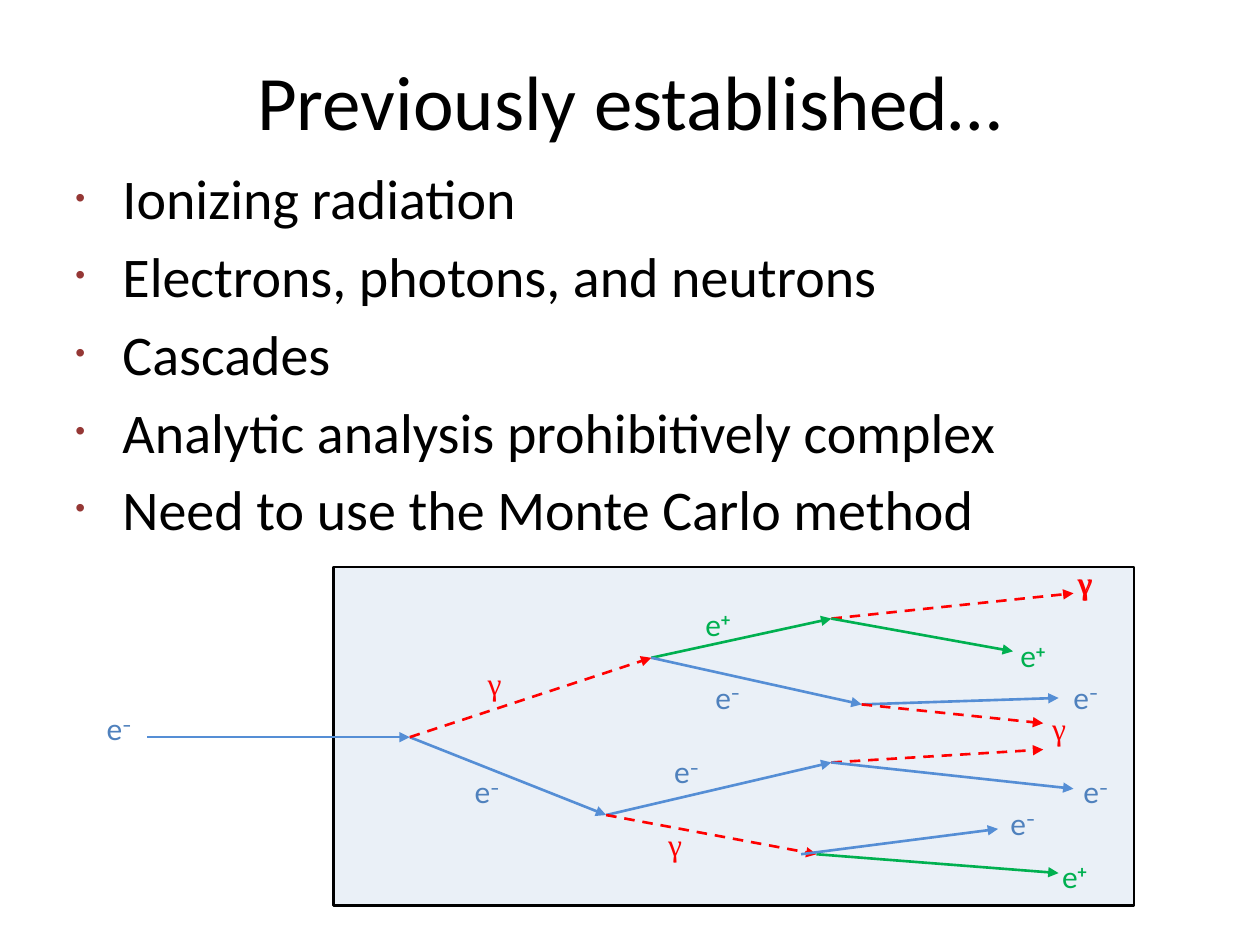
from lxml.etree import SubElement
from pptx import Presentation
from pptx.dml.color import RGBColor
from pptx.enum.dml import MSO_LINE
from pptx.enum.shapes import MSO_CONNECTOR, MSO_SHAPE
from pptx.enum.text import MSO_ANCHOR, PP_ALIGN
from pptx.oxml.ns import qn
from pptx.util import Cm, Pt

TITLE = "Previously established…"
POINTS = [
    "Ionizing radiation",
    "Electrons, photons, and neutrons",
    "Cascades",
    "Analytic analysis prohibitively complex",
    "Need to use the Monte Carlo method",
]
COLORS = {
    "text": "000000", "bullet": "953735", "slab": "DCE6F2",
    "photon": "FF0000", "positron": "00B050",
    "electron": "558ED5", "label": "4F81BD",
}
# Places below are in centimetres.
SLAB = (6.73, 11.43, 16.13, 6.83)
NODES = {
    "start": (2.97, 14.86), "entry": (8.26, 14.86),
    "low": (12.22, 16.43), "high": (13.13, 13.26),
    "top": (16.76, 12.47), "upper": (17.37, 14.2),
    "lower": (16.76, 15.37), "base": (16.46, 17.22),
}
# Each track: particle, start, end (a node name or a place).
TRACKS = [
    ("electron", "start", "entry"),
    ("electron", "entry", "low"),
    ("photon", "entry", "high"),
    ("positron", "high", "top"),
    ("electron", "high", "upper"),
    ("electron", "low", "lower"),
    ("photon", "low", "base"),
    ("photon", "top", (21.64, 11.96)),
    ("positron", "top", (20.42, 13.13)),
    ("positron", "base", (21.34, 17.6)),
    ("electron", (16.15, 17.22), (20.12, 16.71)),
    ("electron", "upper", (21.34, 14.07)),
    ("photon", "upper", (21.03, 14.58)),
    ("photon", "lower", (21.03, 15.11)),
    ("electron", "lower", (21.64, 15.9)),
]
# Each label: symbol, sign, color, font, box size, side inset, places.
LABELS = [
    ("γ", "", "photon", "Times New Roman", (0.41, 1.47), 0.13,
     [(21.59, 11.23), (21.62, 11.23), (9.7, 13.26), (21.08, 14.17),
      (13.34, 16.51)]),
    ("e", "+", "positron", "Calibri", (1.14, 1.02), 0.25,
     [(13.97, 12.07), (20.32, 12.7), (21.16, 17.15)]),
    ("e", "–", "label", "Calibri", (1.14, 1.02), 0.25,
     [(1.9, 14.17), (14.17, 13.54), (13.34, 15.04), (21.39, 13.54),
      (21.59, 15.44), (9.32, 15.44), (20.12, 16.08)]),
]


def color(name):
    return RGBColor.from_string(COLORS[name])


def style(para, size, name, face="Calibri"):
    para.font.size = Pt(size)
    para.font.name = face
    para.font.color.rgb = color(name)


def add_text(slide, box, wrap=True):
    frame = slide.shapes.add_textbox(*map(Cm, box)).text_frame
    frame.word_wrap = wrap
    return frame


def add_bullet(para):
    props = para._p.get_or_add_pPr()
    props.set("marL", str(Cm(0.95)))
    props.set("indent", str(-Cm(0.95)))
    tint = SubElement(props, qn("a:buClr"))
    SubElement(tint, qn("a:srgbClr"), val=COLORS["bullet"])
    SubElement(props, qn("a:buSzPct"), val="50000")
    SubElement(props, qn("a:buFont"), typeface="Arial")
    SubElement(props, qn("a:buChar"), char="•")


def add_slab(slide):
    slab = slide.shapes.add_shape(MSO_SHAPE.RECTANGLE, *map(Cm, SLAB))
    slab.shadow.inherit = False
    slab.fill.solid()
    slab.fill.fore_color.rgb = color("slab")
    tint = slab._element.spPr.find(qn("a:solidFill"))[0]
    SubElement(tint, qn("a:alpha"), val="59000")
    slab.line.color.rgb = color("text")
    slab.line.width = Pt(1.5)


def add_track(slide, kind, start, end):
    ends = [*NODES.get(start, start), *NODES.get(end, end)]
    track = slide.shapes.add_connector(MSO_CONNECTOR.STRAIGHT, *map(Cm, ends))
    track.line.color.rgb = color(kind)
    track.line.width = Pt(1.5)
    if kind == "photon":
        track.line.dash_style = MSO_LINE.DASH
    props = track._element.spPr
    SubElement(props.find(qn("a:ln")), qn("a:tailEnd"), type="triangle")
    SubElement(props, qn("a:effectLst"))


def add_label(slide, symbol, sign, tint, face, size, inset, place):
    frame = add_text(slide, (*place, *size), wrap=False)
    frame.margin_left = frame.margin_right = Cm(inset)
    para = frame.paragraphs[0]
    style(para, 18, tint, face)
    para.add_run().text = symbol
    if sign:
        run = para.add_run()
        run.text = sign
        run.font.bold = True
        run._r.get_or_add_rPr().set("baseline", "30000")


def main():
    deck = Presentation()
    deck.slide_width, deck.slide_height = Cm(25.4), Cm(19.05)
    slide = deck.slides.add_slide(deck.slide_layouts[6])

    frame = add_text(slide, (1.27, 0.43, 22.86, 3.18))
    frame.vertical_anchor = MSO_ANCHOR.MIDDLE
    para = frame.paragraphs[0]
    para.text = TITLE
    para.alignment = PP_ALIGN.CENTER
    style(para, 44, "text")

    frame = add_text(slide, (1.27, 3.18, 22.86, 12.57))
    for i, point in enumerate(POINTS):
        para = frame.add_paragraph() if i else frame.paragraphs[0]
        para.text = point
        if i:
            para.space_before = Pt(6)
        add_bullet(para)
        style(para, 32, "text")

    add_slab(slide)
    for track in TRACKS:
        add_track(slide, *track)
    for *look, places in LABELS:
        for place in places:
            add_label(slide, *look, place)
    deck.save("out.pptx")


if __name__ == "__main__":
    main()
